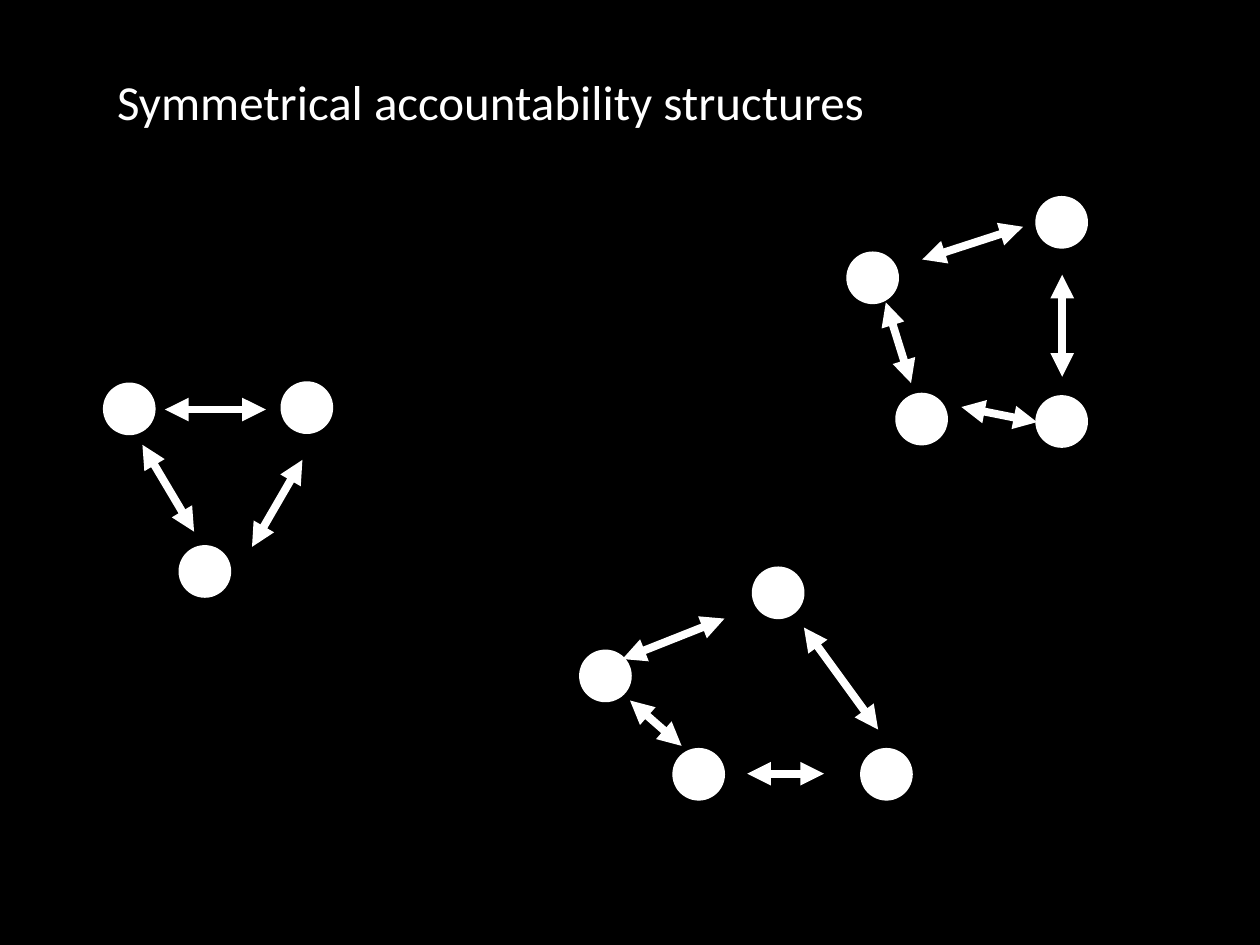
"""Build a slide of three symmetrical accountability networks."""
from dataclasses import dataclass

from lxml.etree import SubElement as Sub
from pptx import Presentation
from pptx.dml.color import RGBColor as RGB
from pptx.enum.shapes import MSO_CONNECTOR as Link, MSO_SHAPE as Form
from pptx.enum.text import MSO_AUTO_SIZE as Fit
from pptx.oxml.ns import qn
from pptx.util import Pt

TITLE = "Symmetrical accountability structures"

NETS = [
    {
        "dots": [(161.3, 218.9), (103, 312.5), (59.8, 219.6)],
        "links": [
            (144, 312.5, 172.8, 262.8),
            (81.4, 254.2, 110.9, 303.8),
            (94.3, 234, 151.9, 234),
        ],
    },
    {
        "dots": [(492.5, 428.4), (385.2, 428.4), (430.6, 324.7), (331.9, 372.2)],
        "links": [
            (427, 442.1, 470.9, 442.1),
            (459.4, 358.6, 501.8, 416.9),
            (360, 400.3, 389.5, 426.2),
            (355.7, 376.6, 414, 353.5),
        ],
    },
    {
        "dots": [(512.6, 225.4), (484.6, 144.7), (592.6, 226.8), (592.6, 113)],
        "links": [
            (549.4, 232.6, 592.6, 241.2),
            (506.2, 172.8, 520.6, 218.9),
            (607, 157, 607, 215.3),
            (527, 148.3, 584.6, 129.6),
        ],
    },
]


@dataclass(frozen=True)
class Theme:
    back: RGB = RGB(0, 0, 0)
    ink: RGB = RGB(255, 255, 255)
    font: str = "Calibri"
    size: float = 28
    dot: float = 28.1
    rim: float = 2
    stem: float = 4.5


LOOK = Theme()


def add_text(slide, text, box, *, size=LOOK.size, font=LOOK.font, ink=LOOK.ink):
    frame = slide.shapes.add_textbox(*map(Pt, box)).text_frame
    frame.word_wrap = True
    frame.auto_size = Fit.SHAPE_TO_FIT_TEXT
    run = frame.paragraphs[0].add_run()
    run.text = text
    run.font.size, run.font.name = Pt(size), font
    run.font.color.rgb = ink


def add_dot(slide, left, top):
    dot = slide.shapes.add_shape(
        Form.OVAL, *map(Pt, (left, top, LOOK.dot, LOOK.dot)))
    dot.shadow.inherit = False
    dot.fill.solid()
    dot.fill.fore_color.rgb = dot.line.color.rgb = LOOK.ink
    dot.line.width = Pt(LOOK.rim)


def add_link(slide, ends):
    link = slide.shapes.add_connector(Link.STRAIGHT, *map(Pt, ends))
    link.line.color.rgb = LOOK.ink
    link.line.width = Pt(LOOK.stem)
    props = link._element.spPr
    for tag in ("a:headEnd", "a:tailEnd"):
        Sub(props.find(qn("a:ln")), qn(tag), type="triangle")
    Sub(props, qn("a:effectLst"))


def main():
    deck = Presentation()
    deck.slide_width, deck.slide_height = Pt(720), Pt(540)
    slide = deck.slides.add_slide(deck.slide_layouts[6])
    slide.background.fill.solid()
    slide.background.fill.fore_color.rgb = LOOK.back
    for net in NETS:
        for spot in net["dots"]:
            add_dot(slide, *spot)
        for ends in net["links"]:
            add_link(slide, ends)
    add_text(slide, TITLE, (59.8, 37.4, 481.7, 41))
    deck.save("out.pptx")


if __name__ == "__main__":
    main()
